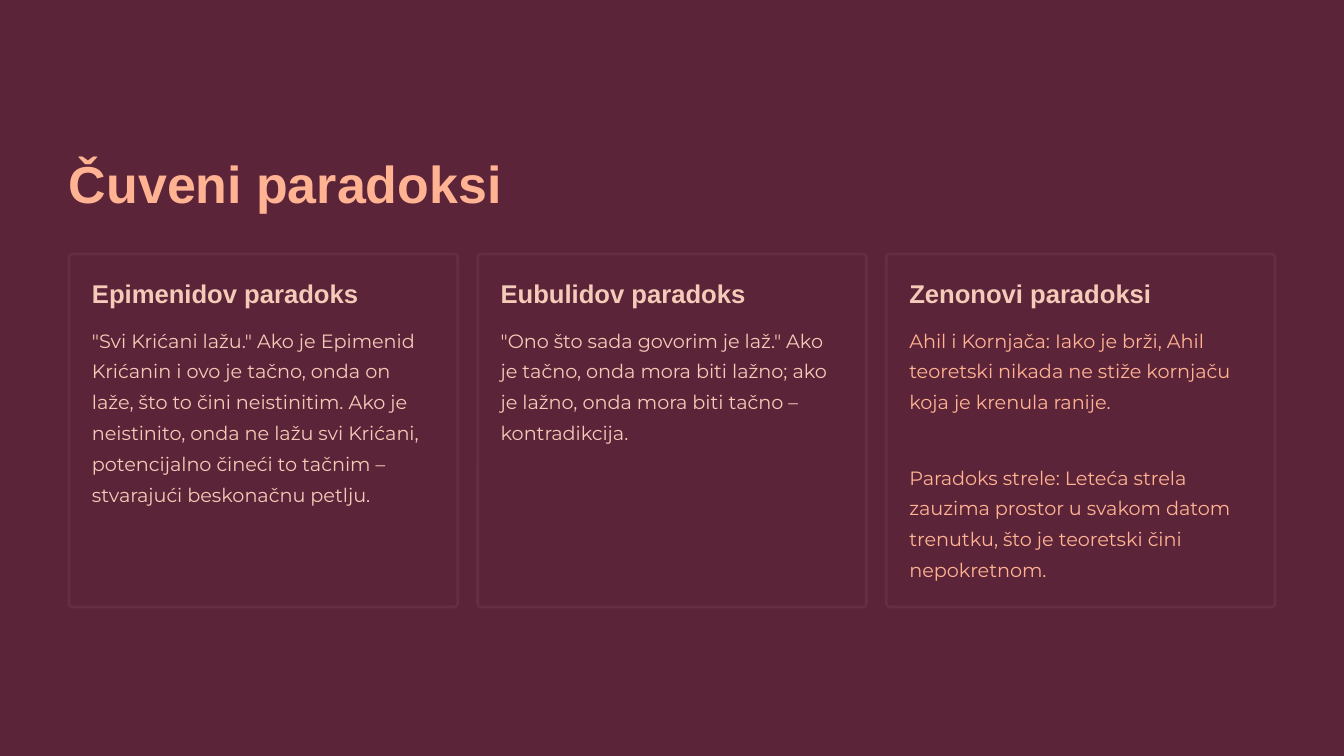
from pptx import Presentation
from pptx.dml.color import RGBColor
from pptx.enum.shapes import MSO_SHAPE
from pptx.enum.text import MSO_ANCHOR, MSO_AUTO_SIZE, PP_ALIGN
from pptx.util import Emu, Pt

ROUNDED = MSO_SHAPE.ROUNDED_RECTANGLE
TOP, LEFT, NO_FIT = MSO_ANCHOR.TOP, PP_ALIGN.LEFT, MSO_AUTO_SIZE.NONE

PLUM = RGBColor(0x5C, 0x24, 0x38)
BORDER = RGBColor(0x66, 0x2E, 0x42)
PEACH = RGBColor(0xFF, 0xB3, 0x93)
CREAM = RGBColor(0xF4, 0xCA, 0xB8)

TITLE = "Čuveni paradoksi"
# Heading, body colour, body texts
PARADOXES = [
    ("Epimenidov paradoks", CREAM, [
        '"Svi Krićani lažu." Ako je Epimenid Krićanin i ovo je tačno, onda on '
        "laže, što to čini neistinitim. Ako je neistinito, onda ne lažu svi "
        "Krićani, potencijalno čineći to tačnim – stvarajući beskonačnu petlju.",
    ]),
    ("Eubulidov paradoks", CREAM, [
        '"Ono što sada govorim je laž." Ako je tačno, onda mora biti lažno; '
        "ako je lažno, onda mora biti tačno – kontradikcija.",
    ]),
    ("Zenonovi paradoksi", PEACH, [
        "Ahil i Kornjača: Iako je brži, Ahil teoretski nikada ne stiže "
        "kornjaču koja je krenula ranije.",
        "Paradoks strele: Leteća strela zauzima prostor u svakom datom "
        "trenutku, što je teoretski čini nepokretnom.",
    ]),
]

# Style: font, size, line spacing, bold
TITLE_STYLE = ("Arial", 44.5, 56, True)
HEADING_STYLE = ("Arial", 22, 28, True)
BODY_STYLE = ("Montserrat", 16.5, 26.5, False)

PAGE_WIDTH, PAGE_HEIGHT = 1344, 756
MARGIN, GAP, INSET = 69, 20, 23
CARD_TOP, CARD_HEIGHT = 254, 353
CARD_WIDTH = (PAGE_WIDTH - 2 * MARGIN - GAP * (len(PARADOXES) - 1)) / len(PARADOXES)
HEADING_TOP, HEADING_HEIGHT = 276, 33
BODY_TOP, BODY_HEIGHT, BODY_STEP = 321, 126, 137


def px(length):
    return Emu(round(length * 914400 / 84))


def write(box, text, style, color):
    font_name, size, spacing, bold = style
    frame = box.text_frame
    frame.text = text
    frame.word_wrap = True
    frame.auto_size = NO_FIT
    frame.vertical_anchor = TOP
    frame.margin_left = frame.margin_right = 0
    frame.margin_top = frame.margin_bottom = 0
    para = frame.paragraphs[0]
    para.alignment = LEFT
    para.line_spacing = Pt(spacing)
    para.space_before = Pt(0)
    font = para.runs[0].font
    font.name, font.size, font.bold = font_name, Pt(size), bold
    font.color.rgb = color


def add_card(page, left, heading, color, texts):
    card = page.shapes.add_shape(
        ROUNDED, px(left), px(CARD_TOP), px(CARD_WIDTH), px(CARD_HEIGHT))
    card.adjustments[0] = 0.01
    card.shadow.inherit = False
    card.fill.solid()
    card.fill.fore_color.rgb = PLUM
    card.line.color.rgb = BORDER
    card.line.width = Pt(2.4)

    text_left, text_width = px(left + INSET), px(CARD_WIDTH - 2 * INSET)
    box = page.shapes.add_textbox(
        text_left, px(HEADING_TOP), text_width, px(HEADING_HEIGHT))
    write(box, heading, HEADING_STYLE, CREAM)
    for row, text in enumerate(texts):
        box = page.shapes.add_textbox(
            text_left, px(BODY_TOP + row * BODY_STEP), text_width, px(BODY_HEIGHT))
        write(box, text, BODY_STYLE, color)


def main():
    deck = Presentation()
    deck.slide_width, deck.slide_height = px(PAGE_WIDTH), px(PAGE_HEIGHT)
    page = deck.slides.add_slide(deck.slide_layouts[5])
    page.background.fill.solid()
    page.background.fill.fore_color.rgb = PLUM

    title = page.shapes.title
    title.left, title.top = px(MARGIN), px(149)
    title.width, title.height = px(524), px(66)
    write(title, TITLE, TITLE_STYLE, PEACH)

    for column, paradox in enumerate(PARADOXES):
        add_card(page, MARGIN + column * (CARD_WIDTH + GAP), *paradox)
    deck.save("out.pptx")


if __name__ == "__main__":
    main()
